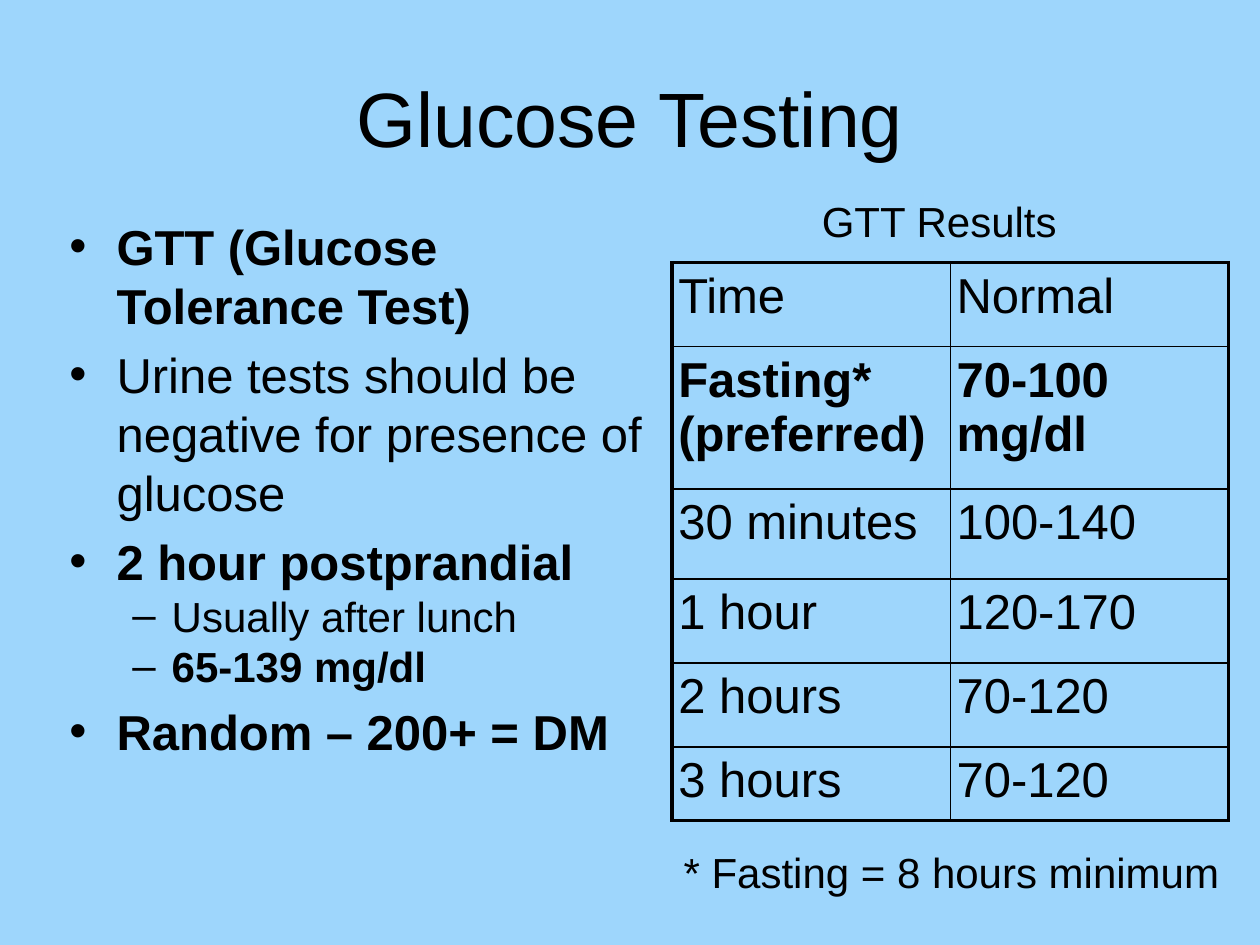
import pptx
import pptx.util
import pptx.dml.color
import pptx.enum.text
import pptx.oxml.ns
from lxml import etree

Pt = pptx.util.Pt
ANCHOR = pptx.enum.text.MSO_ANCHOR
ALIGN = pptx.enum.text.PP_ALIGN
INK = "000000"
SKY = "9ED6FC"
INSET = 3.6
THIN, THICK = 1, 2.25

TITLE = "Glucose Testing"
TESTS = [
    (0, "GTT (Glucose Tolerance Test)", True),
    (0, "Urine tests should be negative for presence of glucose", False),
    (0, "2 hour postprandial", True),
    (1, "Usually after lunch", False),
    (1, "65-139 mg/dl", True),
    (0, "Random – 200+ = DM", True),
]
LEVELS = [
    dict(size=28, before=6, bullet="•", margin=27, indent=-27),
    dict(size=24, before=0, bullet="–", margin=58.5, indent=-22.5),
]
RESULTS = [
    (48, ["Time"], ["Normal"], False),
    (81.5, ["Fasting*", "(preferred)"], ["70-100 mg/dl"], True),
    (51.5, ["30 minutes"], ["100-140"], False),
    (48, ["1 hour"], ["120-170"], False),
    (48, ["2 hours"], ["70-120"], False),
    (42, ["3 hours"], ["70-120"], False),
]
CAPTION = "GTT Results"
FOOTNOTE = "* Fasting = 8 hours minimum"


def color(value):
    return pptx.dml.color.RGBColor.from_string(value)


def add_xml(parent, tag, **attributes):
    return etree.SubElement(parent, pptx.oxml.ns.qn(tag), attributes)


def write(paragraph, text, size=28, bold=False, align=ALIGN.LEFT, before=0,
          bullet=None, margin=0, indent=0):
    paragraph.alignment = align
    paragraph.space_before = Pt(before)
    if bullet:
        properties = paragraph._p.get_or_add_pPr()
        properties.set("marL", str(Pt(margin)))
        properties.set("indent", str(Pt(indent)))
        add_xml(properties, "a:buFont", typeface="Arial")
        add_xml(properties, "a:buChar", char=bullet)
    run = paragraph.add_run()
    run.text = text
    run.font.name = "Arial"
    run.font.size = Pt(size)
    run.font.bold = bold
    run.font.color.rgb = color(INK)


def fill_frame(frame, lines):
    for number, (text, style) in enumerate(lines):
        paragraph = frame.add_paragraph() if number else frame.paragraphs[0]
        write(paragraph, text, **style)


def set_insets(target):
    target.margin_left = target.margin_right = Pt(INSET)
    target.margin_top = target.margin_bottom = Pt(INSET)


def add_text(slide, place, lines, anchor=ANCHOR.TOP):
    frame = slide.shapes.add_textbox(*map(Pt, place)).text_frame
    frame.word_wrap = True
    frame.vertical_anchor = anchor
    set_insets(frame)
    fill_frame(frame, lines)


def set_borders(cell, widths):
    properties = cell._tc.get_or_add_tcPr()
    for side, width in widths.items():
        line = add_xml(properties, "a:ln" + side, w=str(Pt(width)))
        add_xml(add_xml(line, "a:solidFill"), "a:srgbClr", val=INK)


def add_results(slide, left, top, width):
    heights = [row[0] for row in RESULTS]
    table = slide.shapes.add_table(
        len(RESULTS), 2, Pt(left), Pt(top), Pt(width), Pt(sum(heights))).table
    table.first_row = table.horz_banding = False
    last = len(RESULTS) - 1
    for r, (height, time, normal, bold) in enumerate(RESULTS):
        table.rows[r].height = Pt(height)
        for c, lines in enumerate((time, normal)):
            cell = table.cell(r, c)
            set_insets(cell)
            fill_frame(cell.text_frame, [(line, dict(bold=bold)) for line in lines])
            set_borders(cell, {
                "L": THIN if c else THICK,
                "R": THICK if c else THIN,
                "T": THIN if r else THICK,
                "B": THICK if r == last else THIN,
            })
            cell.fill.background()


def main():
    deck = pptx.Presentation()
    deck.slide_width, deck.slide_height = Pt(720), Pt(540)
    slide = deck.slides.add_slide(deck.slide_layouts[6])
    slide.background.fill.solid()
    slide.background.fill.fore_color.rgb = color(SKY)

    add_text(slide, (36, 21.6, 648, 90),
             [(TITLE, dict(size=44, align=ALIGN.CENTER))], ANCHOR.MIDDLE)
    add_text(slide, (36, 120, 336, 378),
             [(text, dict(LEVELS[level], bold=bold)) for level, text, bold in TESTS])
    add_results(slide, 384, 150, 318)
    add_text(slide, (387, 480, 317, 34.6), [(FOOTNOTE, dict(size=24, before=14))])
    add_text(slide, (466, 108, 209, 34.6), [(CAPTION, dict(size=24, before=14))])
    deck.save("out.pptx")


if __name__ == "__main__":
    main()
